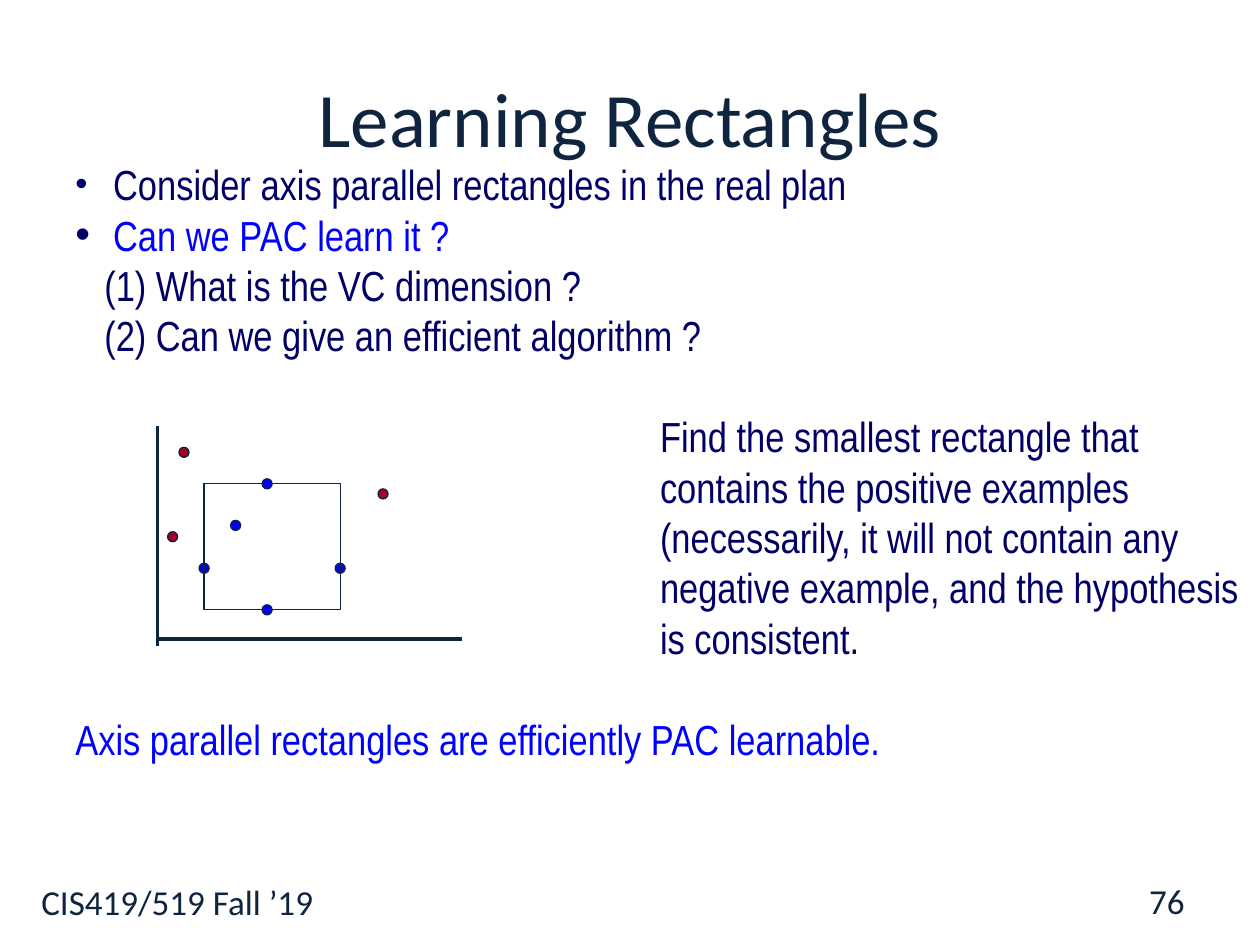
import pptx
import pptx.util
import pptx.dml.color
import pptx.enum.shapes
import pptx.enum.text
import pptx.oxml.ns
import lxml.etree

Inches = pptx.util.Inches
Pt = pptx.util.Pt
Shape = pptx.enum.shapes.MSO_SHAPE
Align = pptx.enum.text.PP_ALIGN
Anchor = pptx.enum.text.MSO_ANCHOR
qn = pptx.oxml.ns.qn

HUES = {"ink": "0F243E", "navy": "000066", "blue": "0000FF", "red": "A50021"}


def tint(name):
    return pptx.dml.color.RGBColor.from_string(HUES[name])


def write(frame, text, size=24, font="Arial Narrow", hue="navy", align=Align.LEFT,
          indent=0, bullet=None, first=False):
    para = frame.paragraphs[0] if first else frame.add_paragraph()
    para.alignment = align
    run = para.add_run()
    run.text = text
    run.font.size = Pt(size)
    run.font.name = font
    run.font.color.rgb = tint(hue)
    props = para._p.get_or_add_pPr()
    props.set("marL", str(Inches(indent)))
    props.set("indent", str(-Inches(indent) if bullet else 0))
    if bullet:
        color = lxml.etree.SubElement(props, qn("a:buClr"))
        lxml.etree.SubElement(color, qn("a:srgbClr"), val=HUES["navy"])
        lxml.etree.SubElement(props, qn("a:buSzPct"), val=str(bullet * 1000))
        lxml.etree.SubElement(props, qn("a:buFont"), typeface="Arial")
        lxml.etree.SubElement(props, qn("a:buChar"), char="•")
    else:
        lxml.etree.SubElement(props, qn("a:buNone"))


class Page:
    def __init__(self, deck):
        self.slide = deck.slides.add_slide(deck.slide_layouts[5])
        self.shapes = self.slide.shapes
        self.line = "ink"

    def title(self, text, x, y, w, h):
        head = self.shapes.title
        head.left, head.top, head.width, head.height = map(Inches, (x, y, w, h))
        head.text_frame.vertical_anchor = Anchor.MIDDLE
        write(head.text_frame, text, size=44, font="Calibri", hue="ink",
              align=Align.CENTER, first=True)

    def text(self, items, x, y, w, h, anchor=Anchor.TOP):
        frame = self.shapes.add_textbox(*map(Inches, (x, y, w, h))).text_frame
        frame.word_wrap = True
        frame.vertical_anchor = anchor
        for i, (text, style) in enumerate(items):
            write(frame, text, first=i == 0, **style)

    def shape(self, kind, x, y, w, h, fill=None):
        form = self.shapes.add_shape(kind, *map(Inches, (x, y, w, h)))
        form.shadow.inherit = False
        if fill:
            form.fill.solid()
            form.fill.fore_color.rgb = tint(fill)
        else:
            form.fill.background()
        form.line.color.rgb = tint(self.line)
        form.line.width = Pt(0.75)

    def dot(self, x, y, fill, size=0.08):
        self.shape(Shape.OVAL, x - size / 2, y - size / 2, size, size, fill)

    def axis(self, x1, y1, x2, y2):
        line = self.shapes.add_connector(
            pptx.enum.shapes.MSO_CONNECTOR.STRAIGHT, *map(Inches, (x1, y1, x2, y2)))
        line.line.color.rgb = tint(self.line)
        line.line.width = Pt(2.25)
        lxml.etree.SubElement(line._element.spPr, qn("a:effectLst"))


def main():
    deck = pptx.Presentation()
    deck.slide_width, deck.slide_height = Inches(10), Inches(7.5)
    page = Page(deck)
    small = {"size": 20, "font": "Calibri", "hue": "ink"}

    page.text([("CIS419/519 Fall ’19", small)], 0.23, 6.94, 4, 0.5)
    page.title("Learning Rectangles", 0.5, 0.3, 9, 1.25)
    page.text([
        ("Consider axis parallel rectangles in the real plan", {"indent": 0.3, "bullet": 83}),
        ("Can we PAC learn it ?", {"indent": 0.3, "bullet": 100, "hue": "blue"}),
        ("(1) What is the VC dimension ?", {"indent": 0.23}),
        ("(2) Can we give an efficient algorithm ?", {"indent": 0.23}),
    ], 0.5, 1.21, 9, 1.7)
    page.text([
        ("Find the smallest rectangle that contains the positive examples "
         "(necessarily, it will not contain any negative example, and the "
         "hypothesis is consistent.", {}),
    ], 5.14, 3.21, 4.83, 2.1)
    page.text([
        ("Axis parallel rectangles are efficiently PAC learnable.", {"hue": "blue"}),
    ], 0.5, 5.61, 9, 0.5)

    page.axis(1.25, 5.07, 3.67, 5.07)
    page.axis(1.25, 5.13, 1.25, 3.38)
    left, top, wide, high = 1.62, 3.84, 1.08, 1
    inner = [(2.12, top), (left, 4.51), (left + wide, 4.51), (2.12, top + high), (1.87, 4.17)]
    outer = [(1.37, 4.26), (1.46, 3.59), (3.04, 3.92)]
    for spots, fill in ((inner, "blue"), (outer, "red")):
        for x, y in spots:
            page.dot(x, y, fill)
    page.shape(Shape.RECTANGLE, left, top, wide, high)

    page.text([("76", {**small, "align": Align.RIGHT})], 7.17, 6.95, 2.33, 0.4, Anchor.MIDDLE)
    deck.save("out.pptx")


if __name__ == "__main__":
    main()
